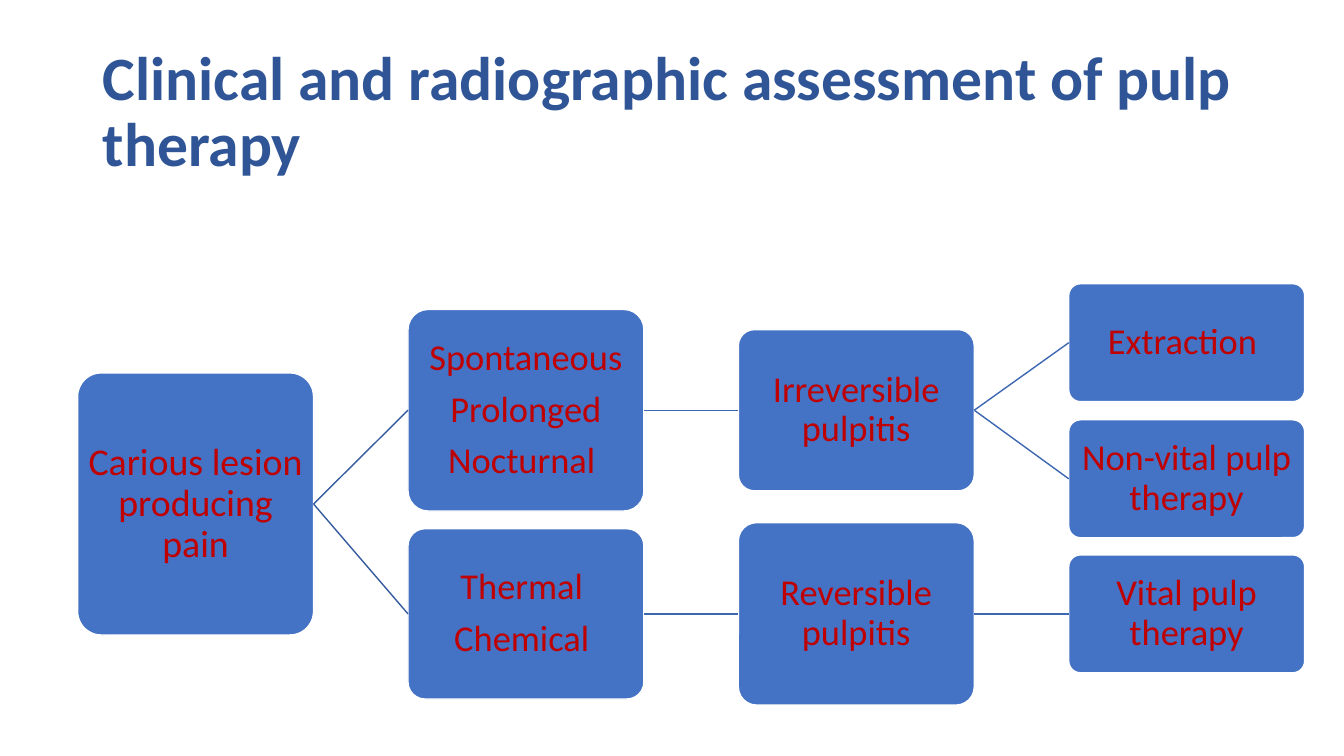
"""Build a slide with a decision tree for pulp therapy."""
from dataclasses import dataclass

from lxml.etree import SubElement
from pptx import Presentation
from pptx.dml.color import RGBColor
from pptx.enum.shapes import MSO_CONNECTOR as Connector, MSO_SHAPE as Preset
from pptx.enum.text import MSO_ANCHOR as Anchor, MSO_AUTO_SIZE as AutoSize, PP_ALIGN as Align
from pptx.oxml.ns import qn
from pptx.shapes.autoshape import Shape
from pptx.slide import Slide
from pptx.text.text import TextFrame
from pptx.util import Inches, Pt

COLORS = {
    "title": "2F5597",
    "box": "4472C4",
    "outline": "FFFFFF",
    "label": "C00000",
    "trunk": "365B9D",
    "branch": "3E67B2",
}
FIRST_LEFT, LAST_LEFT, LAST_COLUMN = 0.77, 10.6, 3
BOX_WIDTH = 2.34


@dataclass(frozen=True)
class Node:
    """A box of the tree, placed by its column and vertical middle."""

    lines: tuple[str, ...]
    column: int
    middle: float
    height: float
    parent: int | None = None
    size: int = 26


NODES = (
    Node(("Carious lesion producing pain",), 0, 5, 2.6, size=27),
    Node(("Spontaneous", "Prolonged", "Nocturnal "), 1, 4.07, 2, 0),
    Node(("Irreversible pulpitis",), 2, 4.07, 1.6, 1),
    Node(("Extraction ",), 3, 3.4, 1.17, 2),
    Node(("Non-vital pulp therapy",), 3, 4.75, 1.17, 2),
    Node(("Thermal ", "Chemical "), 1, 6.09, 1.69, 0),
    Node(("Reversible pulpitis",), 2, 6.09, 1.81, 5),
    Node(("Vital pulp therapy",), 3, 6.09, 1.17, 6),
)


def color(name: str) -> RGBColor:
    """Return a named colour."""
    return RGBColor.from_string(COLORS[name])


def write(frame: TextFrame, lines: tuple[str, ...], *, size: int, ink: str,
          align: Align, bold: bool = False, after: int = 0) -> None:
    """Fill a text frame with one formatted paragraph per line."""
    frame.word_wrap = True
    frame.auto_size = AutoSize.NONE
    frame.vertical_anchor = Anchor.MIDDLE
    for index, line in enumerate(lines):
        para = frame.add_paragraph() if index else frame.paragraphs[0]
        para.alignment = align
        para.line_spacing = 0.9
        para.space_before = Pt(0)
        para.space_after = Pt(after)
        span = para.add_run()
        span.text = line
        span.font.name = "Calibri"
        span.font.size = Pt(size)
        span.font.bold = bold
        span.font.color.rgb = color(ink)


def add_title(page: Slide, text: str) -> None:
    """Place and format the title."""
    title = page.shapes.title
    title.left, title.top = Inches(0.92), Inches(0.4)
    title.width, title.height = Inches(11.5), Inches(1.45)
    write(title.text_frame, (text,), size=44, ink="title", align=Align.LEFT, bold=True)


def add_box(page: Slide, node: Node) -> Shape:
    """Draw the rounded box of a node."""
    left = FIRST_LEFT + node.column * (LAST_LEFT - FIRST_LEFT) / LAST_COLUMN
    box = page.shapes.add_shape(
        Preset.ROUNDED_RECTANGLE, Inches(left), Inches(node.middle - node.height / 2),
        Inches(BOX_WIDTH), Inches(node.height))
    box.adjustments[0] = 0.1
    box.shadow.inherit = False
    box.fill.solid()
    box.fill.fore_color.rgb = color("box")
    box.line.color.rgb = color("outline")
    box.line.width = Pt(1)
    frame = box.text_frame
    frame.margin_left = frame.margin_right = Inches(0.02)
    frame.margin_top = frame.margin_bottom = Inches(0.02)
    write(frame, node.lines, size=node.size, ink="label", align=Align.CENTER, after=9)
    return box


def add_link(page: Slide, parent: Shape, child: Shape, ink: str) -> None:
    """Join the right side of a parent to the left side of its child."""
    link = page.shapes.add_connector(Connector.STRAIGHT, 0, 0, 0, 0)
    link.begin_connect(parent, 3)
    link.end_connect(child, 1)
    link.line.color.rgb = color(ink)
    link.line.width = Pt(1)
    SubElement(link.element.spPr, qn("a:effectLst"))


def main() -> None:
    """Build and save the deck."""
    deck = Presentation()
    deck.slide_width, deck.slide_height = Inches(13.33), Inches(7.5)
    page = deck.slides.add_slide(deck.slide_layouts[5])
    add_title(page, "Clinical and radiographic assessment of pulp therapy")
    boxes = [add_box(page, node) for node in NODES]
    for node, box in zip(NODES, boxes):
        if node.parent is not None:
            add_link(page, boxes[node.parent], box, "branch" if node.parent else "trunk")
    deck.save("out.pptx")


if __name__ == "__main__":
    main()
